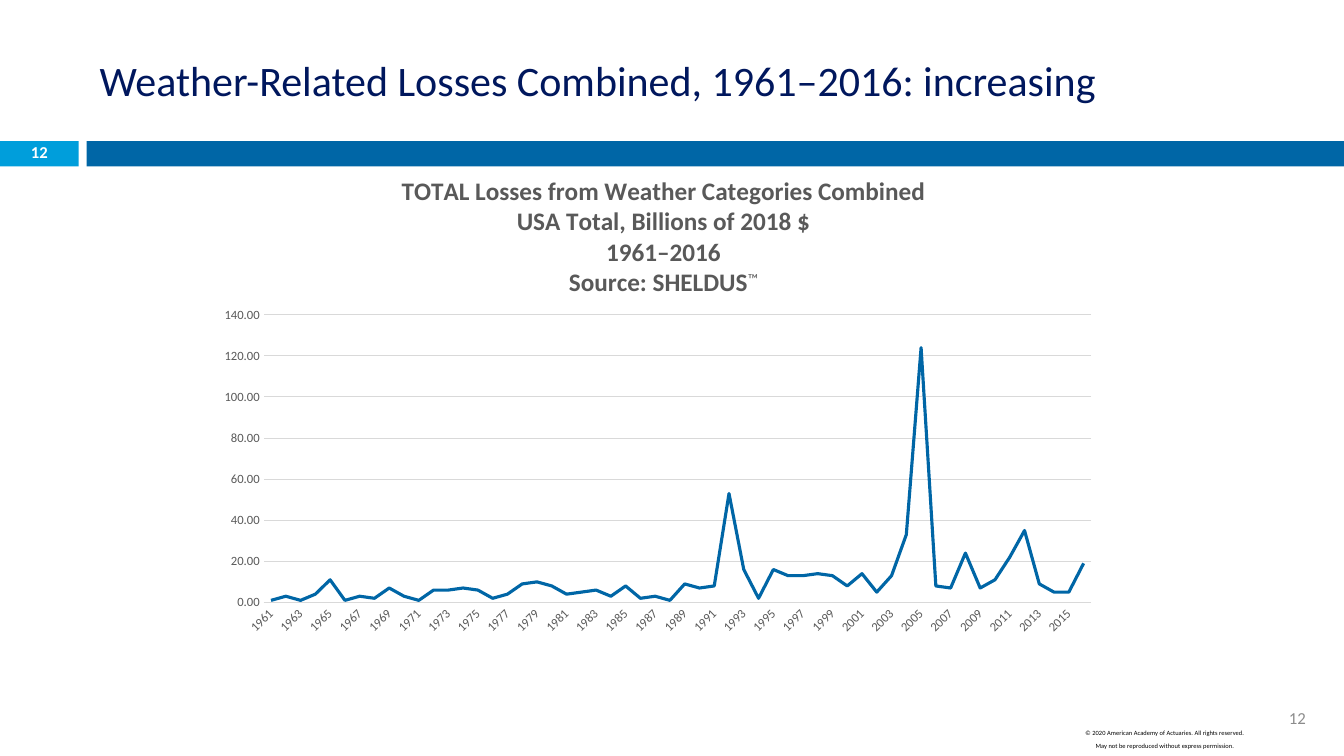
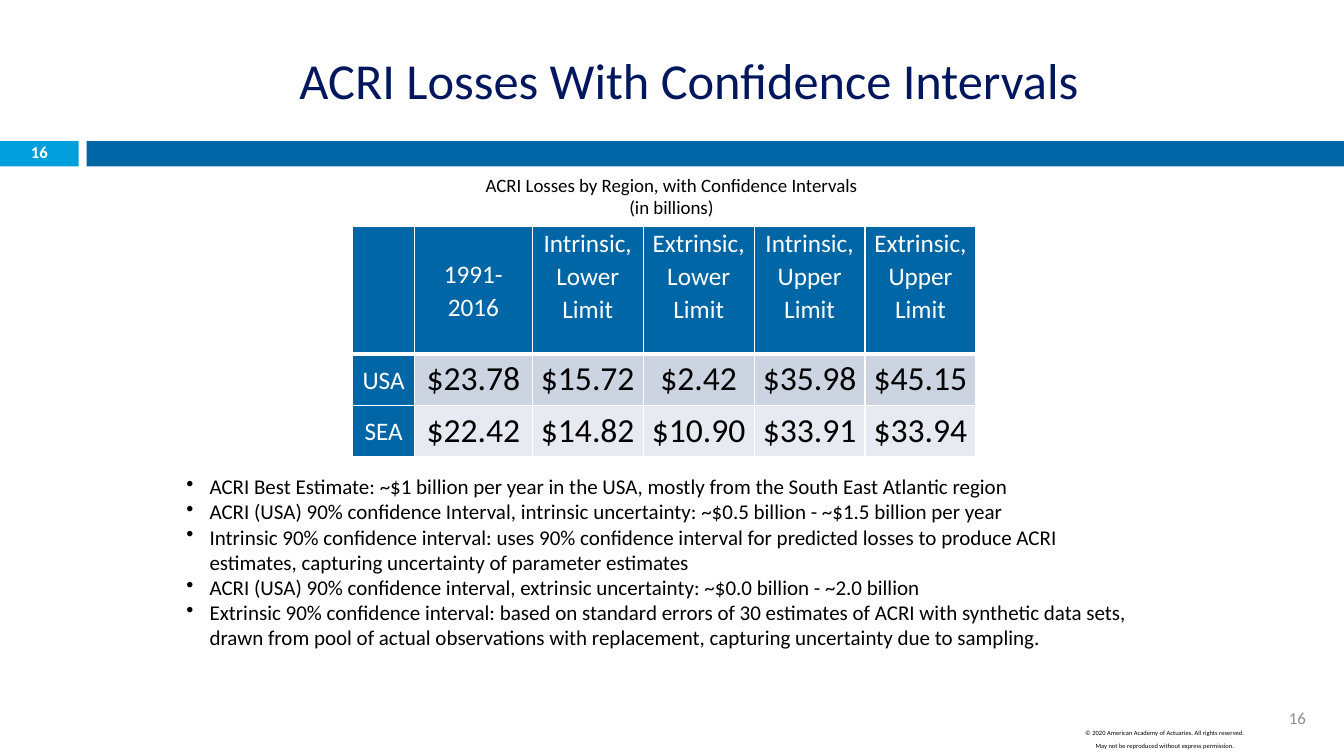
from lxml import etree
from pptx import Presentation, util as u
from pptx.chart.data import CategoryChartData
from pptx.dml.color import RGBColor
from pptx.enum import chart as kinds, shapes, text
from pptx.oxml.ns import qn

PX = 9144  # 100 px to the inch
FONT = "Calibri"
COLORS = {
    "white": "FFFFFF", "black": "000000", "navy": "00175D", "blue": "0066A6",
    "sky": "009EDB", "gray": "8C8C8C", "label": "595959", "grid": "D9D9D9",
    "row_dark": "CCD3E1", "row_light": "E7EAF1",
}
LEFT, CENTER, RIGHT = text.PP_ALIGN.LEFT, text.PP_ALIGN.CENTER, text.PP_ALIGN.RIGHT
TOP, MIDDLE = text.MSO_ANCHOR.TOP, text.MSO_ANCHOR.MIDDLE

COPYRIGHT = ["© 2020 American Academy of Actuaries. All rights reserved.",
             "May not be reproduced without express permission."]
CHART_TITLE = ["TOTAL Losses from Weather Categories Combined",
               "USA Total, Billions of 2018 $", "1961–2016", "Source: SHELDUS"]
FIRST_YEAR = 1961
LOSSES = [
    1, 3, 1, 4, 11, 1, 3, 2, 7, 3, 1, 6, 6, 7, 6, 2, 4, 9, 10,
    8, 4, 5, 6, 3, 8, 2, 3, 1, 9, 7, 8, 53, 16, 2, 16, 13, 13, 14,
    13, 8, 14, 5, 13, 33, 124, 8, 7, 24, 7, 11, 22, 35, 9, 5, 5, 19,
]
CAPTION = ["ACRI Losses by Region, with Confidence Intervals", "(in billions)"]
COLUMN_WIDTHS = [61, 117, 110, 110, 110, 110]
ROW_HEIGHTS = [126, 51, 51]
INTERVALS = [
    ["", "1991-2016", "Intrinsic, Lower Limit", "Extrinsic, Lower Limit",
     "Intrinsic, Upper Limit", "Extrinsic, Upper Limit"],
    ["USA", "$23.78", "$15.72", "$2.42", "$35.98", "$45.15"],
    ["SEA", "$22.42", "$14.82", "$10.90", "$33.91", "$33.94"],
]
FINDINGS = [
    "ACRI Best Estimate: ~$1 billion per year in the USA, mostly from the South East Atlantic region",
    "ACRI (USA) 90% confidence Interval, intrinsic uncertainty: ~$0.5 billion - ~$1.5 billion per year",
    "Intrinsic 90% confidence interval: uses 90% confidence interval for predicted losses to produce "
    "ACRI estimates, capturing uncertainty of parameter estimates",
    "ACRI (USA) 90% confidence interval, extrinsic uncertainty: ~$0.0 billion - ~2.0 billion",
    "Extrinsic 90% confidence interval: based on standard errors of 30 estimates of ACRI with synthetic "
    "data sets, drawn from pool of actual observations with replacement, capturing uncertainty due to "
    "sampling.",
]


def rgb(name):
    return RGBColor.from_string(COLORS[name])


def emu(box):
    return [length * PX for length in box]


def style_font(font, size, color, bold=False):
    font.name, font.size, font.bold = FONT, u.Pt(size), bold
    font.color.rgb = rgb(color)


def raise_span(span):
    span.font._element.set("baseline", "30000")


def add_bullet(para, indent):
    props = para._p.get_or_add_pPr()
    props.set("marL", str(indent * PX))
    props.set("indent", str(-indent * PX))
    etree.SubElement(props, qn("a:buChar")).set("char", "•")


def write(frame, lines, size, color="black", bold=False, align=LEFT,
          spacing=None, bullet=0, raised=False):
    """Fill a text frame with one paragraph for each line."""
    for index, line in enumerate(lines):
        para = frame.add_paragraph() if index else frame.paragraphs[0]
        if bullet:
            add_bullet(para, bullet)
        para.alignment = align
        if spacing:
            para.line_spacing = spacing
        span = para.add_run()
        span.text = line
        style_font(span.font, size, color, bold)
        if raised:
            raise_span(span)


def add_text(page, box, lines, anchor=TOP, wrap=True, **style):
    frame = page.shapes.add_textbox(*emu(box)).text_frame
    frame.word_wrap = wrap
    frame.vertical_anchor = anchor
    write(frame, lines, **style)


def add_band(page, box, color):
    band = page.shapes.add_shape(shapes.MSO_SHAPE.RECTANGLE, *emu(box))
    band.shadow.inherit = False
    band.fill.solid()
    band.fill.fore_color.rgb = rgb(color)
    band.line.fill.background()


def add_page(deck, number, title, size, align=LEFT):
    """Add a slide with the shared title, bands, numbers and footer."""
    page = deck.slides.add_slide(deck.slide_layouts[6])
    add_band(page, (0, 140, 78, 25), "sky")
    add_band(page, (86, 140, 1247, 25), "blue")
    add_text(page, (1045, 717, 221, 30), COPYRIGHT, wrap=False, size=8,
             align=CENTER, raised=True)
    add_text(page, (1005, 692, 300, 40), [number], anchor=MIDDLE, size=12,
             color="gray", align=RIGHT)
    add_text(page, (89, 25, 1189, 108), [title], anchor=MIDDLE, size=size,
             color="navy", align=align)
    add_text(page, (0, 139, 78, 27), [number], anchor=MIDDLE, size=11.9,
             color="white", bold=True, align=CENTER, spacing=0.8)
    return page


def set_layout(parent, index, **fractions):
    """Place a chart part by fractions of the chart area."""
    for old in parent.findall(qn("c:layout")):
        parent.remove(old)
    layout = etree.Element(qn("c:layout"))
    parent.insert(index, layout)
    manual = etree.SubElement(layout, qn("c:manualLayout"))
    if "w" in fractions:
        etree.SubElement(manual, qn("c:layoutTarget")).set("val", "inner")
    for mode in ("xMode", "yMode"):
        etree.SubElement(manual, qn(f"c:{mode}")).set("val", "edge")
    for side, value in fractions.items():
        etree.SubElement(manual, qn(f"c:{side}")).set("val", str(value))


def style_line(line, color, width):
    line.color.rgb = rgb(color)
    line.width = u.Pt(width)


def style_axes(chart):
    years, amounts = chart.category_axis, chart.value_axis
    for axis in (years, amounts):
        axis.major_tick_mark = axis.minor_tick_mark = kinds.XL_TICK_MARK.NONE
        style_font(axis.tick_labels.font, 9, "label")
    style_line(years.format.line, "grid", 0.75)
    years._element.find(qn("c:txPr")).find(qn("a:bodyPr")).set("rot", "-2700000")
    amounts.minimum_scale, amounts.maximum_scale, amounts.major_unit = 0, 140, 20
    amounts.tick_labels.number_format = "0.00"
    amounts.tick_labels.number_format_is_linked = False
    amounts.format.line.fill.background()
    style_line(amounts.major_gridlines.format.line, "grid", 0.75)


def add_loss_chart(page, box):
    data = CategoryChartData()
    data.categories = [str(FIRST_YEAR + offset) for offset in range(len(LOSSES))]
    data.add_series("Series 1", LOSSES)
    chart = page.shapes.add_chart(kinds.XL_CHART_TYPE.LINE, *emu(box), data).chart
    style_font(chart.font, 10, "black")
    chart.has_legend = False
    chart.has_title = True
    frame = chart.chart_title.text_frame
    write(frame, CHART_TITLE, size=18, color="label", bold=True, align=CENTER)
    mark = frame.paragraphs[-1].add_run()
    mark.text = "™"
    style_font(mark.font, 18, "label")
    raise_span(mark)
    set_layout(chart.chart_title._element, 1, x=0.21, y=0.04)
    set_layout(chart._chartSpace.chart.plotArea, 0, x=0.06, y=0.33, w=0.92, h=0.58)
    style_axes(chart)
    plot = chart.plots[0]
    plot.vary_by_categories = False
    series = plot.series[0]
    series.smooth = False
    series.marker.style = kinds.XL_MARKER_STYLE.NONE
    style_line(series.format.line, "blue", 2.25)


def add_borders(cell, bottom):
    props = cell._tc.get_or_add_tcPr()
    for side, width in (("L", 1), ("R", 1), ("T", 1), ("B", bottom)):
        line = etree.SubElement(props, qn(f"a:ln{side}"), w=str(u.Pt(width)))
        fill = etree.SubElement(line, qn("a:solidFill"))
        etree.SubElement(fill, qn("a:srgbClr"), val=COLORS["white"])


def add_interval_table(page, left, top):
    box = (left, top, sum(COLUMN_WIDTHS), sum(ROW_HEIGHTS))
    table = page.shapes.add_table(len(INTERVALS), len(COLUMN_WIDTHS), *emu(box)).table
    table.first_row = table.horz_banding = False
    for column, width in zip(table.columns, COLUMN_WIDTHS):
        column.width = width * PX
    for row, height in zip(table.rows, ROW_HEIGHTS):
        row.height = height * PX
    for r, words in enumerate(INTERVALS):
        for c, word in enumerate(words):
            cell = table.cell(r, c)
            heading = r == 0 or c == 0
            add_borders(cell, bottom=1 if r else 3)
            cell.fill.solid()
            cell.fill.fore_color.rgb = rgb(
                "blue" if heading else "row_dark" if r % 2 else "row_light")
            cell.margin_left = cell.margin_right = 6 * PX
            cell.margin_top = cell.margin_bottom = 0
            cell.vertical_anchor = TOP if r == 0 and c > 1 else MIDDLE
            if not word:
                continue
            if heading:
                write(cell.text_frame, [word], size=18, color="white",
                      align=CENTER, spacing=1.07)
            else:
                write(cell.text_frame, [word], size=24, align=CENTER)


def add_trend_page(deck):
    page = add_page(deck, "12", "Weather-Related Losses Combined, 1961–2016: increasing", 30)
    add_loss_chart(page, (208, 150, 892, 492))


def add_interval_page(deck):
    page = add_page(deck, "16", "ACRI Losses With Confidence Intervals", 36, CENTER)
    add_interval_table(page, 350, 225)
    add_text(page, (423, 167, 486, 78), CAPTION, size=13.5, align=CENTER)
    add_text(page, (175, 465, 964, 210), FINDINGS, size=15, bullet=23)


def main():
    deck = Presentation()
    deck.slide_width, deck.slide_height = emu((1333, 750))
    add_trend_page(deck)
    add_interval_page(deck)
    deck.save("out.pptx")


if __name__ == "__main__":
    main()
